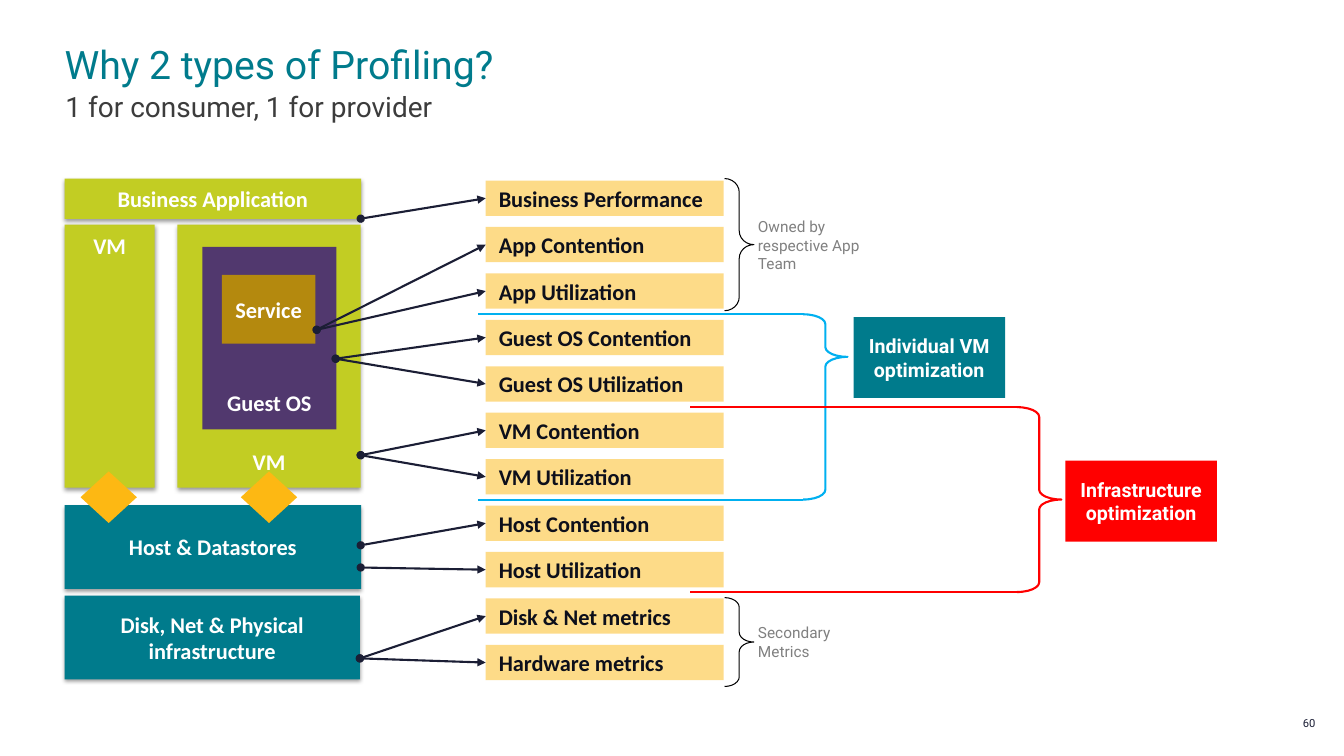
from lxml.etree import SubElement
from pptx import Presentation
from pptx.dml.color import RGBColor
from pptx.enum.shapes import MSO_CONNECTOR, MSO_SHAPE
from pptx.enum.text import MSO_ANCHOR, PP_ALIGN
from pptx.oxml.ns import qn
from pptx.util import Cm, Pt

LIME, TEAL, AMBER = "C2CD23", "007B8C", "FDB813"
NAVY, WHITE, GREY = "1B1E35", "FFFFFF", "808080"
BLUE, RED, BLACK = "00B0F0", "FF0000", "000001"
TOP, MID, LOW = MSO_ANCHOR.TOP, MSO_ANCHOR.MIDDLE, MSO_ANCHOR.BOTTOM
LEFT, CENTER, RIGHT = PP_ALIGN.LEFT, PP_ALIGN.CENTER, PP_ALIGN.RIGHT
INSET = (0.33, 0.18, 0.33, 0.18)
DEEP = (0.33, 0.18, 0.33, 0.33)
PLAIN = (0.25, 0.13, 0.25, 0.13)
NONE = (0, 0, 0, 0)

METRICS = ["Business Performance", "App Contention", "App Utilization",
           "Guest OS Contention", "Guest OS Utilization",
           "VM Contention", "VM Utilization",
           "Host Contention", "Host Utilization",
           "Disk & Net metrics", "Hardware metrics"]

# Start of each arrow and the metrics it leads to
LINKS = [((9.09, 5.51), [0]), ((7.98, 8.31), [1, 2]),
         ((8.46, 9.04), [3, 4]), ((9.09, 11.47), [5, 6]),
         ((9.09, 13.74), [7]), ((9.09, 14.3), [8]),
         ((9.07, 16.59), [9, 10])]


def color(code):
    return RGBColor.from_string(code)


def write(shape, text, size, font, ink, bold=False, align=CENTER,
          anchor=MID, inset=INSET):
    frame = shape.text_frame
    frame.word_wrap = True
    frame.vertical_anchor = anchor
    (frame.margin_left, frame.margin_top,
     frame.margin_right, frame.margin_bottom) = map(Cm, inset)
    para = frame.paragraphs[0]
    para.text = text
    para.alignment = align
    para.font.size = Pt(size)
    para.font.name = font
    para.font.bold = bold
    para.font.color.rgb = color(ink)
    return para


def label(slide, spot, text, size, ink, **style):
    box = slide.shapes.add_textbox(*map(Cm, spot))
    return write(box, text, size, "Roboto", ink, **style)


def solid(slide, kind, spot, fill):
    shape = slide.shapes.add_shape(kind, *map(Cm, spot))
    shape.shadow.inherit = False
    shape.fill.solid()
    shape.fill.fore_color.rgb = color(fill)
    shape.line.fill.background()
    return shape


def block(slide, spot, text, fill, shade=True, **style):
    shape = solid(slide, MSO_SHAPE.RECTANGLE, spot, fill)
    write(shape, text, 16, "Calibri", WHITE, bold=True, **style)
    if shade:
        effects = shape._element.spPr.find(qn("a:effectLst"))
        outer = SubElement(effects, qn("a:outerShdw"), blurRad=str(Pt(3.1)),
                           dist=str(Pt(1.6)), dir="5400000", rotWithShape="0")
        tint = SubElement(outer, qn("a:srgbClr"), val="000000")
        SubElement(tint, qn("a:alpha"), val="38000")


def metric(slide, row, text):
    spot = (12.24, 4.55 + row * 1.17, 6, 0.89)
    shape = solid(slide, MSO_SHAPE.RECTANGLE, spot, AMBER)
    tint = shape._element.spPr.find(qn("a:solidFill"))[0]
    SubElement(tint, qn("a:alpha"), val="50000")
    write(shape, text, 16, "Calibri", "0D0F1B", bold=True, align=LEFT)
    return shape


def stroke(slide, start, end, ink):
    line = slide.shapes.add_connector(MSO_CONNECTOR.STRAIGHT,
                                      *map(Cm, start + end))
    line.line.color.rgb = color(ink)
    line.line.width = Pt(1.5)
    SubElement(line._element.spPr, qn("a:effectLst"))
    return line


def link(slide, start, goal):
    line = stroke(slide, start, start, NAVY)
    line.end_connect(goal, 1)
    ends = line.line._get_or_add_ln()
    SubElement(ends, qn("a:headEnd"), type="oval")
    SubElement(ends, qn("a:tailEnd"), type="triangle")


def brace(slide, spot, ink, width, curve, point=0.5):
    shape = slide.shapes.add_shape(MSO_SHAPE.RIGHT_BRACE, *map(Cm, spot))
    shape.shadow.inherit = False
    shape.fill.background()
    shape.line.color.rgb = color(ink)
    shape.line.width = Pt(width)
    shape.adjustments[0] = curve
    shape.adjustments[1] = point


def scope(slide, left, right, top, high, ink, point):
    for y in (top, top + high):
        stroke(slide, (left, y), (right, y), ink)
    brace(slide, (right, top, 1.12, high), ink, 1.5, 0.22, point)


def goal(slide, left, top, text, fill):
    shape = solid(slide, MSO_SHAPE.RECTANGLE, (left, top, 3.82, 2.04), fill)
    para = write(shape, text, 14, "Roboto", WHITE, bold=True, inset=PLAIN)
    para.space_after = Pt(6)


def owner(slide, top, high, curve, note, text):
    brace(slide, (18.26, top, 0.74, high), BLACK, 0.75, curve)
    para = label(slide, (18.85, note, 3.56, 2.03), text, 11, GREY,
                 align=LEFT, inset=PLAIN)
    para.space_after = Pt(6)


def main():
    deck = Presentation()
    deck.slide_width, deck.slide_height = Cm(33.87), Cm(19.05)
    slide = deck.slides.add_slide(deck.slide_layouts[6])

    # Headings and slide number
    title = label(slide, (1.63, 1.14, 30.56, 1.07), "Why 2 types of Profiling?",
                  28, TEAL, align=LEFT, anchor=LOW, inset=NONE)
    title.line_spacing = 0.9
    label(slide, (1.65, 2.26, 30.45, 0.69), "1 for consumer, 1 for provider",
          20, "3C3C3C", align=LEFT, anchor=TOP, inset=NONE)
    label(slide, (31.93, 17.96, 1.22, 0.51), "60", 8, NAVY,
          align=RIGHT, inset=NONE)

    # Stack of layers
    block(slide, (1.63, 5.66, 2.27, 6.63), "VM", LIME, anchor=TOP)
    block(slide, (4.47, 5.66, 4.62, 6.63), "VM", LIME, anchor=LOW, inset=DEEP)
    block(slide, (5.1, 6.22, 3.38, 4.6), "Guest OS", "51386E", shade=False,
          anchor=LOW, inset=DEEP)
    block(slide, (5.59, 6.93, 2.36, 1.73), "Service", "B4890E", shade=False)
    block(slide, (1.63, 12.73, 7.47, 2.11), "Host & Datastores", TEAL)
    block(slide, (1.63, 15.01, 7.44, 2.11),
          "Disk, Net & Physical infrastructure", TEAL)
    block(slide, (1.63, 4.5, 7.47, 1.02), "Business Application", LIME)
    for left in (2.03, 6.07):
        arrow = solid(slide, MSO_SHAPE.UP_DOWN_ARROW,
                      (left, 11.88, 1.42, 1.3), AMBER)
        arrow.adjustments[0] = 0.54
        arrow.adjustments[1] = 0.33

    # Metrics and the arrows to them
    bars = [metric(slide, row, text) for row, text in enumerate(METRICS)]
    for start, rows in LINKS:
        for row in rows:
            link(slide, start, bars[row])

    # Scopes of optimization
    scope(slide, 12.04, 20.24, 7.92, 4.67, BLUE, 0.23)
    goal(slide, 21.51, 7.99, "Individual VM optimization", TEAL)
    scope(slide, 17.4, 25.63, 10.26, 4.66, RED, 0.5)
    goal(slide, 26.85, 11.61, "Infrastructure optimization", RED)

    # Owners
    owner(slide, 4.5, 3.33, 0.47, 5.16, "Owned by respective App Team")
    owner(slide, 15.06, 2.24, 0.33, 15.16, "Secondary Metrics")

    deck.save("out.pptx")


if __name__ == "__main__":
    main()
